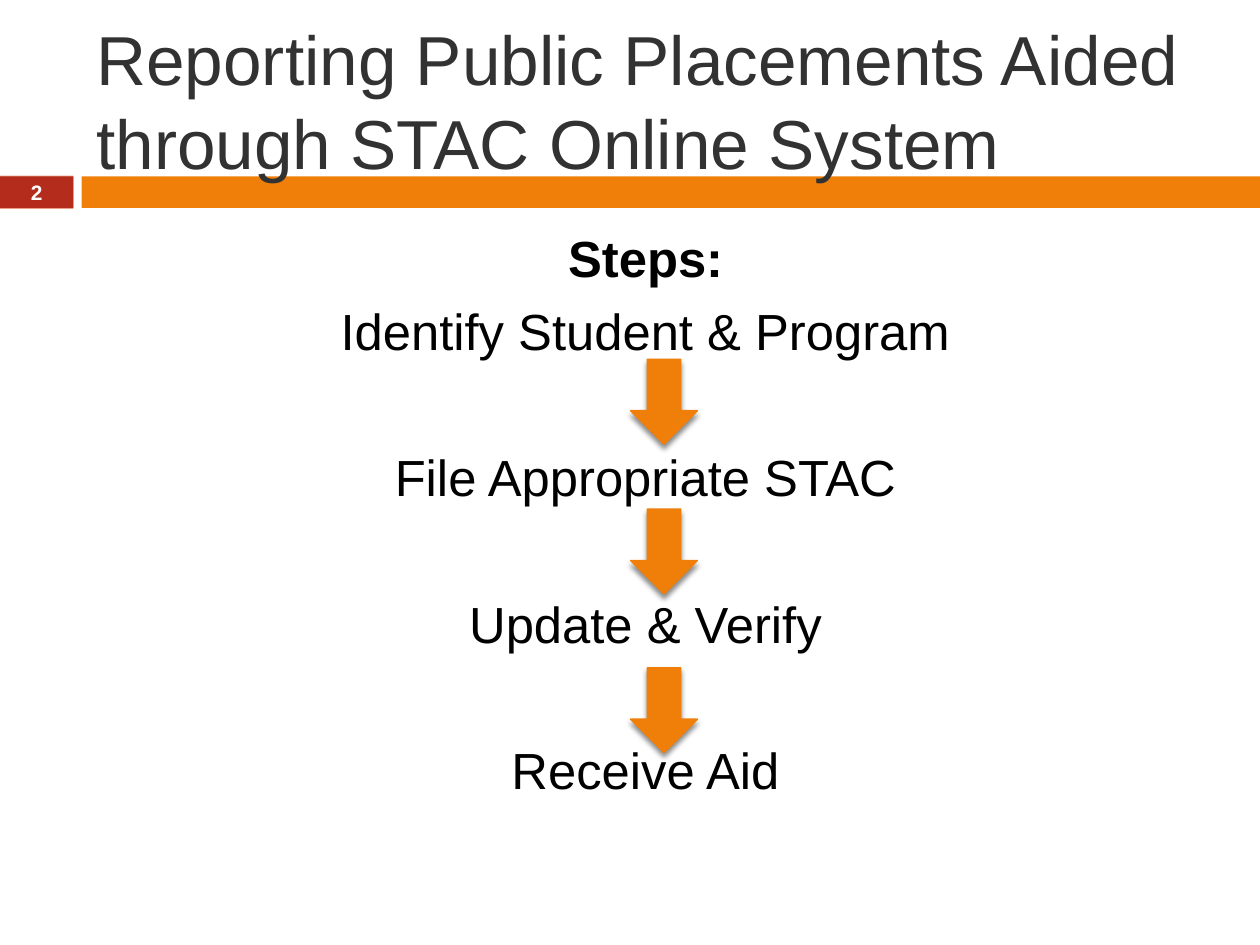
"""Build the slide on the steps for reporting aided public placements."""
from dataclasses import dataclass, field

from lxml.etree import SubElement
from pptx import Presentation
from pptx.dml.color import RGBColor
from pptx.enum.shapes import MSO_SHAPE as Shape
from pptx.enum.text import MSO_ANCHOR as Anchor, PP_ALIGN as Align
from pptx.oxml.ns import qn
from pptx.util import Pt

COLORS = {
    "orange": "F07F09",
    "red": "9F2936",
    "badge": "CC3300",
    "title": "323232",
    "black": "000000",
    "white": "FFFFFF",
}
STEPS = ["Identify Student & Program", "File Appropriate STAC", "Update & Verify", "Receive Aid"]
STEP_SIZE, HEADING_GAP, STEP_GAP = 29, 7, 48.8
ARROW_TOPS = [210.4, 296, 386.7]


@dataclass
class Box:
    left: float
    top: float
    width: float
    height: float


@dataclass
class Line:
    text: str
    size: float
    color: str
    bold: bool = False
    para: dict = field(default_factory=dict)


def rgb(name: str) -> RGBColor:
    return RGBColor.from_string(COLORS[name])


def lengths(box: Box) -> list:
    return [Pt(v) for v in (box.left, box.top, box.width, box.height)]


def set_all(obj, values: dict) -> None:
    for name, value in values.items():
        setattr(obj, name, value)


def write(sp, lines: list[Line], **frame) -> None:
    tf = sp.text_frame
    set_all(tf, {"word_wrap": True, **frame})
    for i, line in enumerate(lines):
        p = tf.add_paragraph() if i else tf.paragraphs[0]
        set_all(p, line.para)
        r = p.add_run()
        r.text = line.text
        set_all(r.font, {"name": "Arial", "size": Pt(line.size), "bold": line.bold})
        r.font.color.rgb = rgb(line.color)


def add_block(s, shape: Shape, box: Box, color: str):
    sp = s.shapes.add_shape(shape, *lengths(box))
    sp.shadow.inherit = False
    sp.fill.solid()
    sp.fill.fore_color.rgb = rgb(color)
    sp.line.fill.background()
    return sp


def add_alpha(color_el, percent: int) -> None:
    SubElement(color_el, qn("a:alpha"), val=str(percent * 1000))


def add_arrow(s, top: float) -> None:
    sp = add_block(s, Shape.LEFT_ARROW, Box(355.2, top, 48.5, 38.2), "orange")
    sp.rotation = 270
    sp.line.color.rgb = rgb("orange")
    sp.line.width = Pt(0.79)
    effects = sp._element.spPr.find(qn("a:effectLst"))
    shadow = SubElement(effects, qn("a:outerShdw"), blurRad=str(Pt(3)), dist=str(Pt(2.4)),
                        dir="5400000", rotWithShape="0")
    add_alpha(SubElement(shadow, qn("a:srgbClr"), val=COLORS["black"]), 45)


def main() -> None:
    prs = Presentation()
    set_all(prs, {"slide_width": Pt(720), "slide_height": Pt(540)})
    s = prs.slides.add_slide(prs.slide_layouts[6])

    add_block(s, Shape.RECTANGLE, Box(0, 100.8, 42, 18), "red")
    add_block(s, Shape.RECTANGLE, Box(46.6, 100.8, 673.4, 18), "orange")

    title = s.shapes.add_textbox(*lengths(Box(48, 18, 642, 78)))
    write(title, [Line("Reporting Public Placements Aided through STAC Online System",
                       39.6, "title", para={"line_spacing": Pt(48)})],
          vertical_anchor=Anchor.MIDDLE, margin_top=Pt(2.8))

    badge = add_block(s, Shape.RECTANGLE, Box(0, 100.4, 42, 19), "badge")
    add_alpha(badge._element.spPr.find(qn("a:solidFill"))[0], 47)
    write(badge, [Line("2", 11.9, "white", True, {"alignment": Align.CENTER})],
          vertical_anchor=Anchor.MIDDLE, margin_top=0, margin_bottom=0)

    lines = [Line("Steps:", STEP_SIZE, "black", True, {"alignment": Align.CENTER})]
    for i, step in enumerate(STEPS):
        gap = Pt(STEP_GAP if i else HEADING_GAP)
        lines.append(Line(step, STEP_SIZE, "black",
                          para={"alignment": Align.CENTER, "space_before": gap}))
    body = s.shapes.add_textbox(*lengths(Box(48, 126, 642, 354)))
    write(body, lines, margin_top=Pt(3.6))

    for top in ARROW_TOPS:
        add_arrow(s, top)

    prs.save("out.pptx")


if __name__ == "__main__":
    main()
